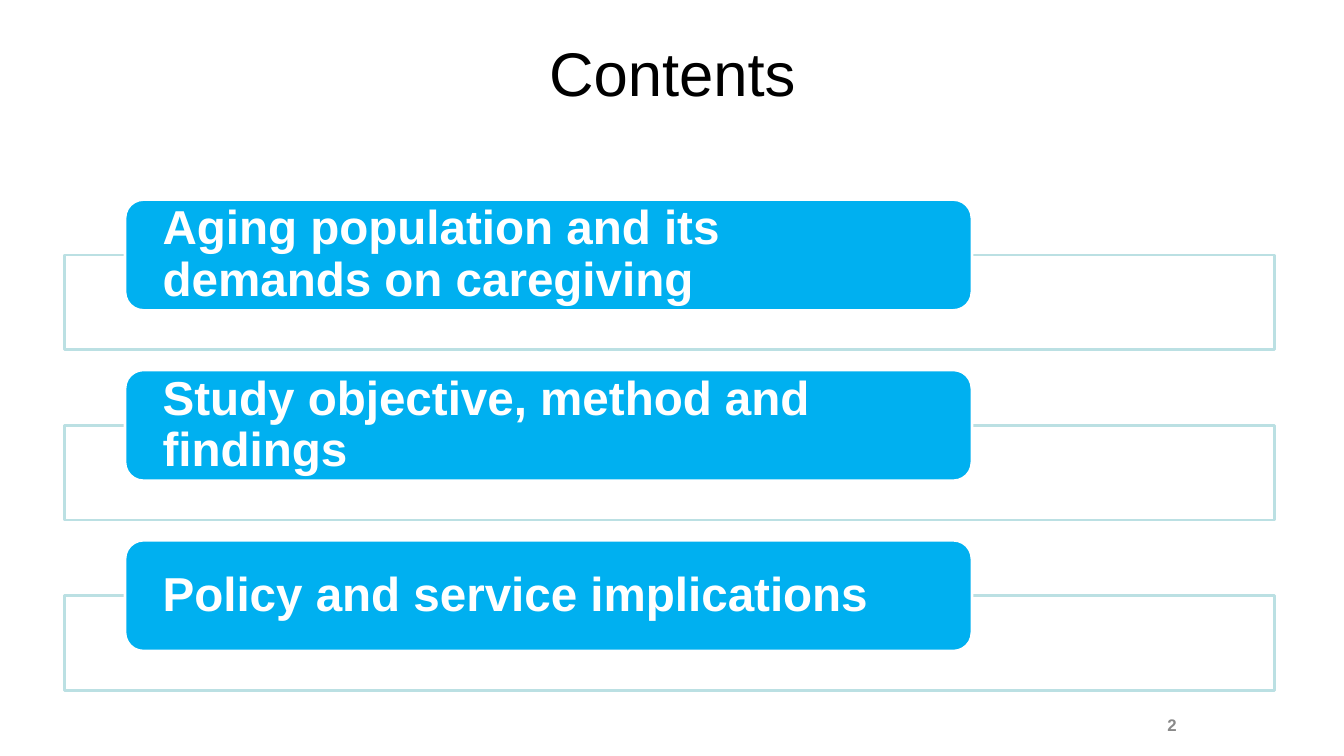
import pptx
import pptx.util
import pptx.dml.color
import pptx.enum.shapes
import pptx.enum.text
from dataclasses import dataclass
from lxml import etree

TITLE = "Contents"
TOPICS = [
    "Aging population and its demands on caregiving",
    "Study objective, method and findings",
    "Policy and service implications",
]
NUMBER = "2"


@dataclass(frozen=True)
class Theme:
    font: str = "Arial"
    ink: str = "000000"
    paper: str = "FFFFFF"
    accent: str = "00B0F0"
    edge: str = "BBE0E3"
    muted: str = "898989"
    head: int = 44
    body: int = 34
    foot: int = 12
    line: int = 2


theme = Theme()
WIDTH, HEIGHT = 13.33, 7.5
TOP, PITCH = 1.98, 1.69
FRAME = (0.64, 0.55, 12, 0.94)
LABEL = (1.24, 0, 8.4, 1.1)
FORMS = pptx.enum.shapes.MSO_SHAPE
ALIGN = pptx.enum.text.PP_ALIGN
ANCHOR = pptx.enum.text.MSO_ANCHOR
inch = pptx.util.Inches


def color(code):
    return pptx.dml.color.RGBColor.from_string(code)


def write(shape, text, size, ink, bold, align, anchor):
    frame = shape.text_frame
    frame.text = text
    frame.word_wrap = True
    frame.vertical_anchor = anchor
    para = frame.paragraphs[0]
    para.alignment = align
    font = para.runs[0].font
    font.name, font.size, font.bold = theme.font, pptx.util.Pt(size), bold
    font.color.rgb = color(ink)
    return frame


def draw(slide, form, area, row, fill, line):
    left, drop, width, height = area
    box = (left, TOP + row * PITCH + drop, width, height)
    shape = slide.shapes.add_shape(form, *map(inch, box))
    shape.shadow.inherit = False
    shape.fill.solid()
    shape.fill.fore_color.rgb = color(fill)
    shape.line.color.rgb = color(line)
    shape.line.width = pptx.util.Pt(theme.line)
    return shape


def fade(shape, share):
    tint = shape.element.spPr.find(".//{*}solidFill/{*}srgbClr")
    space = etree.QName(tint).namespace
    etree.SubElement(tint, f"{{{space}}}alpha", val=str(share * 1000))


def main():
    deck = pptx.Presentation()
    deck.slide_width, deck.slide_height = inch(WIDTH), inch(HEIGHT)
    slide = deck.slides.add_slide(deck.slide_layouts[5])

    title = slide.shapes.title
    title.left, title.top = inch(0.67), inch(0.3)
    title.width, title.height = inch(12), inch(1.25)
    write(title, TITLE, theme.head, theme.ink, False, ALIGN.CENTER, ANCHOR.TOP)

    for row, topic in enumerate(TOPICS):
        frame = draw(slide, FORMS.RECTANGLE, FRAME, row, theme.paper, theme.edge)
        fade(frame, 90)
        label = draw(slide, FORMS.ROUNDED_RECTANGLE, LABEL, row,
                     theme.accent, theme.paper)
        text = write(label, topic, theme.body, theme.paper, True,
                     ALIGN.LEFT, ANCHOR.MIDDLE)
        text.margin_left = text.margin_right = inch(0.32)
        text.margin_top = text.margin_bottom = 0
        text.paragraphs[0].line_spacing = 0.9

    foot = slide.shapes.add_textbox(*map(inch, (8.66, 6.99, 3.11, 0.4)))
    write(foot, NUMBER, theme.foot, theme.muted, True, ALIGN.RIGHT, ANCHOR.MIDDLE)
    deck.save("out.pptx")


if __name__ == "__main__":
    main()
